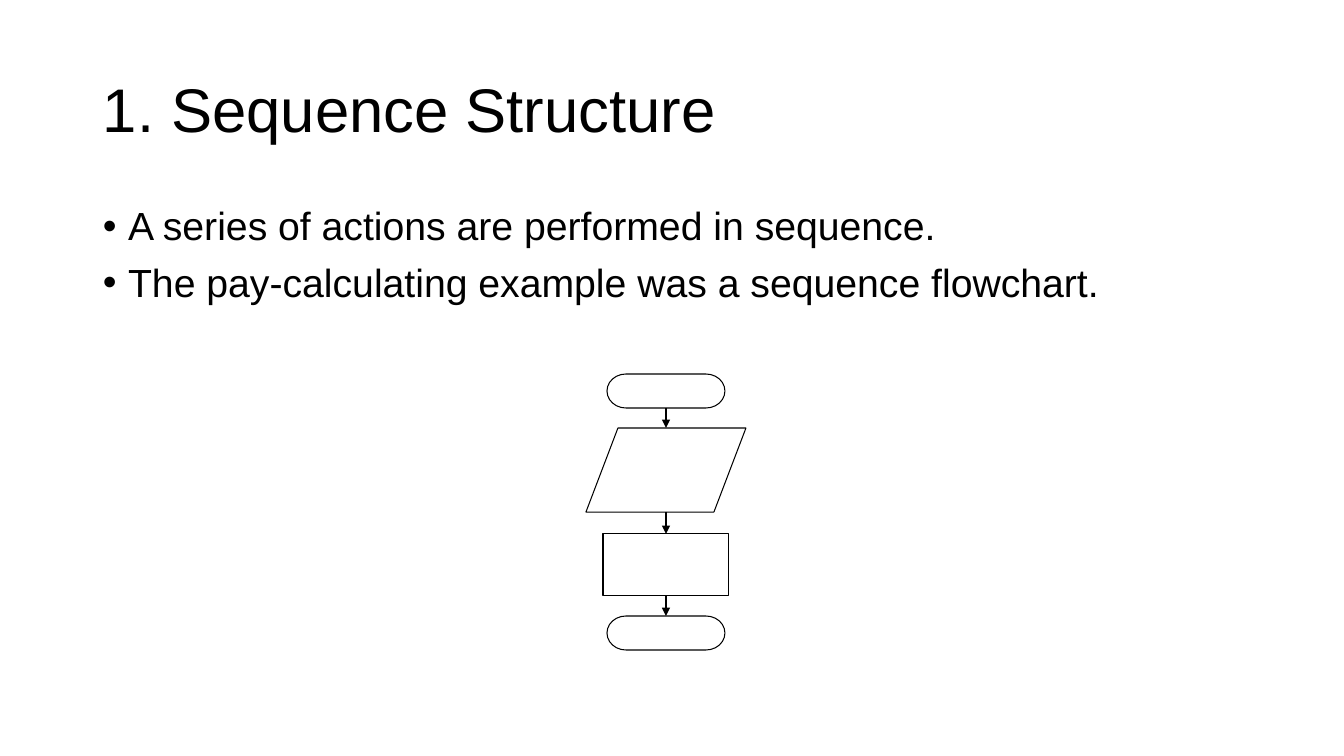
from itertools import pairwise

from pptx import Presentation
from pptx.dml.color import RGBColor
from pptx.enum import shapes, text
from pptx.oxml.ns import qn
from pptx.util import Pt
from lxml import etree

EMU_PER_INCH = 914400
PX_PER_INCH = 100.8
COLOURS = {"ink": "000000", "paper": "FFFFFF"}
FONT = "Arial"
KIND = shapes.MSO_SHAPE
CENTRE = 666
TERMINATOR = (KIND.FLOWCHART_TERMINATOR, 118, 34)
INPUT_OUTPUT = (KIND.FLOWCHART_DATA, 160, 84)
PROCESS = (KIND.RECTANGLE, 126, 62)
STEPS = [(TERMINATOR, 374), (INPUT_OUTPUT, 428), (PROCESS, 534), (TERMINATOR, 616)]


def px(length):
    return round(length * EMU_PER_INCH / PX_PER_INCH)


def colour(name):
    return RGBColor.from_string(COLOURS[name])


def add_text(page, left, top, width, height, lines, size, anchor):
    box = page.shapes.add_textbox(px(left), px(top), px(width), px(height))
    frame = box.text_frame
    frame.word_wrap = True
    frame.vertical_anchor = anchor
    frame.text = "\n".join(lines)
    for para in frame.paragraphs:
        para.line_spacing = 0.9
        for span in para.runs:
            span.font.name = FONT
            span.font.size = Pt(size)
            span.font.color.rgb = colour("ink")
    return box


def add_bullets(box):
    for para in box.text_frame.paragraphs:
        para.space_before = Pt(10)
        properties = para._p.get_or_add_pPr()
        properties.set("marL", str(EMU_PER_INCH // 4))
        properties.set("indent", str(-EMU_PER_INCH // 4))
        etree.SubElement(properties, qn("a:buFont")).set("typeface", FONT)
        etree.SubElement(properties, qn("a:buChar")).set("char", "•")


def add_step(page, symbol, top):
    kind, width, height = symbol
    step = page.shapes.add_shape(
        kind, px(CENTRE - width // 2), px(top), px(width), px(height)
    )
    step.shadow.inherit = False
    step.fill.background()
    step.line.color.rgb = colour("ink")
    step.line.width = Pt(0.75)
    return step


def add_arrow(page, upper, lower):
    arrow = page.shapes.add_connector(
        shapes.MSO_CONNECTOR.STRAIGHT,
        px(CENTRE), upper.top + upper.height, px(CENTRE), lower.top,
    )
    if upper.auto_shape_type != KIND.FLOWCHART_DATA:
        arrow.begin_connect(upper, 2)
    if lower.auto_shape_type != KIND.FLOWCHART_DATA:
        arrow.end_connect(lower, 0)
    arrow.line.color.rgb = colour("ink")
    arrow.line.width = Pt(0.75)
    etree.SubElement(arrow.line._get_or_add_ln(), qn("a:tailEnd")).set("type", "triangle")
    etree.SubElement(arrow._element.spPr, qn("a:effectLst"))


def main():
    deck = Presentation()
    deck.slide_width, deck.slide_height = px(1344), px(756)
    page = deck.slides.add_slide(deck.slide_layouts[6])
    page.background.fill.solid()
    page.background.fill.fore_color.rgb = colour("paper")

    add_text(page, 93, 40, 1159, 146, ["1. Sequence Structure"], 44,
             text.MSO_ANCHOR.MIDDLE)
    points = add_text(page, 93, 202, 1159, 480, [
        "A series of actions are performed in sequence.",
        "The pay-calculating example was a sequence flowchart.",
    ], 28, text.MSO_ANCHOR.TOP)
    add_bullets(points)

    steps = [add_step(page, symbol, top) for symbol, top in STEPS]
    for upper, lower in pairwise(steps):
        add_arrow(page, upper, lower)

    deck.save("out.pptx")


if __name__ == "__main__":
    main()
